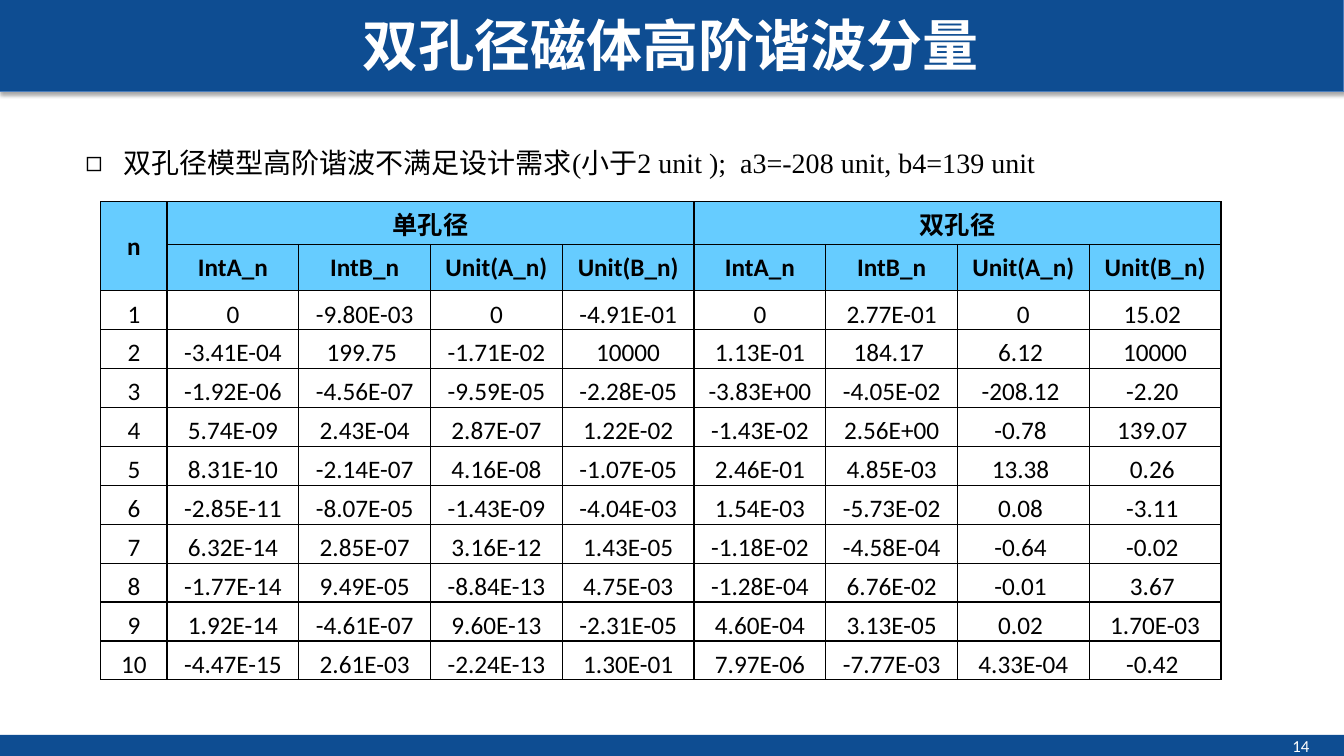
from dataclasses import dataclass
from lxml.etree import SubElement
from pptx import Presentation
from pptx.dml.color import RGBColor
from pptx.enum.shapes import MSO_SHAPE
from pptx.enum.text import MSO_ANCHOR, MSO_AUTO_SIZE, PP_ALIGN
from pptx.oxml.ns import qn
from pptx.util import Cm, Pt


@dataclass(frozen=True)
class Theme:
    navy: str = "0E4D92"
    edge: str = "4B7EBC"
    sky: str = "66CCFF"
    white: str = "FFFFFF"
    black: str = "000000"
    head: str = "Arial"
    sans: str = "Calibri"
    serif: str = "Times New Roman"
    title: int = 40
    body: int = 20
    cell: int = 18
    small: int = 12


WIDTH = 33.87
HEADS = ["IntA_n", "IntB_n", "Unit(A_n)", "Unit(B_n)"]
GROUPS = ["单孔径", "双孔径"]
DATA = """
0 -9.80E-03 0 -4.91E-01 0 2.77E-01 0 15.02
-3.41E-04 199.75 -1.71E-02 10000 1.13E-01 184.17 6.12 10000
-1.92E-06 -4.56E-07 -9.59E-05 -2.28E-05 -3.83E+00 -4.05E-02 -208.12 -2.20
5.74E-09 2.43E-04 2.87E-07 1.22E-02 -1.43E-02 2.56E+00 -0.78 139.07
8.31E-10 -2.14E-07 4.16E-08 -1.07E-05 2.46E-01 4.85E-03 13.38 0.26
-2.85E-11 -8.07E-05 -1.43E-09 -4.04E-03 1.54E-03 -5.73E-02 0.08 -3.11
6.32E-14 2.85E-07 3.16E-12 1.43E-05 -1.18E-02 -4.58E-04 -0.64 -0.02
-1.77E-14 9.49E-05 -8.84E-13 4.75E-03 -1.28E-04 6.76E-02 -0.01 3.67
1.92E-14 -4.61E-07 9.60E-13 -2.31E-05 4.60E-04 3.13E-05 0.02 1.70E-03
-4.47E-15 2.61E-03 -2.24E-13 1.30E-01 7.97E-06 -7.77E-03 4.33E-04 -0.42
"""


class Deck:
    def __init__(self, theme):
        self.theme = theme
        self.file = Presentation()
        self.file.slide_width = Cm(WIDTH)
        self.file.slide_height = Cm(19.05)
        self.slide = self.file.slides.add_slide(self.file.slide_layouts[1])
        self.shapes = self.slide.shapes

    def text(self, para, text, font, size, color, bold=False):
        run = para.add_run()
        run.text = text
        run.font.name = font
        run.font.size = Pt(size)
        run.font.bold = bold
        run.font.color.rgb = RGBColor.from_string(color)

    def place(self, shape, left, top, width, height):
        shape.left, shape.top = Cm(left), Cm(top)
        shape.width, shape.height = Cm(width), Cm(height)
        frame = shape.text_frame
        frame.word_wrap = True
        frame.auto_size = MSO_AUTO_SIZE.NONE
        return frame

    def bar(self, top, height, edge=None):
        bar = self.shapes.add_shape(MSO_SHAPE.RECTANGLE, 0, Cm(top), Cm(WIDTH), Cm(height))
        bar.shadow.inherit = False
        bar.fill.solid()
        bar.fill.fore_color.rgb = RGBColor.from_string(self.theme.navy)
        if edge:
            bar.line.color.rgb = RGBColor.from_string(edge)
            bar.line.width = Pt(0.75)
            self.shade(bar)
        else:
            bar.line.fill.background()
        self.shapes._spTree.insert(2, bar._element)

    def shade(self, shape):
        effects = shape._element.spPr.find(qn("a:effectLst"))
        shadow = SubElement(effects, qn("a:outerShdw"), blurRad=str(Pt(3.1)),
                            dist=str(Pt(1.8)), dir="5400000", rotWithShape="0")
        tint = SubElement(shadow, qn("a:srgbClr"), val=self.theme.black)
        SubElement(tint, qn("a:alpha"), val="35000")

    def title(self, text):
        frame = self.place(self.shapes.title, 2.29, 0, 29.21, 2.24)
        frame.vertical_anchor = MSO_ANCHOR.MIDDLE
        para = frame.paragraphs[0]
        para.alignment = PP_ALIGN.CENTER
        self.text(para, text, self.theme.head, self.theme.title, self.theme.white, True)

    def point(self, text):
        frame = self.place(self.slide.placeholders[1], 1.9, 3.12, 27.3, 1.37)
        frame.vertical_anchor = MSO_ANCHOR.TOP
        para = frame.paragraphs[0]
        para.line_spacing = 1.5
        para.space_before = Pt(0)
        props = para._p.get_or_add_pPr()
        props.set("marL", str(Cm(0.95)))
        props.set("indent", str(Cm(-0.95)))
        SubElement(props, qn("a:buFont"), typeface=self.theme.head)
        SubElement(props, qn("a:buChar"), char="◻")
        self.text(para, text, self.theme.serif, self.theme.body, self.theme.black)

    def number(self, text):
        box = self.shapes.add_textbox(0, 0, 0, 0)
        frame = self.place(box, 27.33, 18.52, 5.92, 0.56)
        frame.margin_left, frame.margin_right = Cm(0.3), Cm(0.25)
        frame.margin_top, frame.margin_bottom = Cm(0.02), 0
        para = frame.paragraphs[0]
        para.alignment = PP_ALIGN.RIGHT
        self.text(para, text, self.theme.sans, self.theme.small, self.theme.white)

    def frame(self, cell, fill=None):
        cell.margin_left = cell.margin_right = cell.margin_top = Cm(0.02)
        cell.margin_bottom = 0
        props = cell._tc.get_or_add_tcPr()
        for side in ("lnL", "lnR", "lnT", "lnB"):
            line = SubElement(props, qn(f"a:{side}"), w=str(Pt(1)))
            paint = SubElement(line, qn("a:solidFill"))
            SubElement(paint, qn("a:srgbClr"), val=self.theme.black)
        if fill:
            cell.fill.solid()
            cell.fill.fore_color.rgb = RGBColor.from_string(fill)
        else:
            cell.fill.background()

    def fill(self, cell, text, head=False, font=None):
        cell.vertical_anchor = MSO_ANCHOR.MIDDLE if head else MSO_ANCHOR.BOTTOM
        para = cell.text_frame.paragraphs[0]
        para.alignment = PP_ALIGN.CENTER
        self.text(para, text, font or self.theme.sans, self.theme.cell, self.theme.black, head)

    def table(self, groups, heads, rows):
        wides = [1.67] + [3.32] * len(groups) * len(heads)
        highs = [1.08, 1.17] + [0.98] * len(rows)
        grid = self.shapes.add_table(len(highs), len(wides), Cm(2.54), Cm(5.08),
                                     Cm(sum(wides)), Cm(sum(highs))).table
        grid.first_row = grid.horz_banding = False
        for col, wide in zip(grid.columns, wides):
            col.width = Cm(wide)
        for i, high in enumerate(highs):
            grid.rows[i].height = Cm(high)
            for cell in grid.rows[i].cells:
                self.frame(cell, self.theme.sky if i < 2 else None)

        grid.cell(0, 0).merge(grid.cell(1, 0))
        self.fill(grid.cell(0, 0), "n", True)
        for i, group in enumerate(groups):
            first = 1 + i * len(heads)
            grid.cell(0, first).merge(grid.cell(0, first + len(heads) - 1))
            self.fill(grid.cell(0, first), group, True, self.theme.serif)
            for j, head in enumerate(heads, first):
                self.fill(grid.cell(1, j), head, True)
        for i, row in enumerate(rows, 1):
            for j, value in enumerate([str(i)] + row):
                plain = "." in value and "E" not in value
                self.fill(grid.cell(i + 1, j), value + " " if plain else value)


def main():
    theme = Theme()
    deck = Deck(theme)
    deck.bar(18.52, 0.6)
    deck.bar(-0.03, 2.34, theme.edge)
    deck.title("双孔径磁体高阶谐波分量")
    deck.table(GROUPS, HEADS, [line.split() for line in DATA.strip().splitlines()])
    deck.point("双孔径模型高阶谐波不满足设计需求(小于2 unit );  a3=-208 unit, b4=139 unit")
    deck.number("14")
    deck.file.save("out.pptx")


if __name__ == "__main__":
    main()
